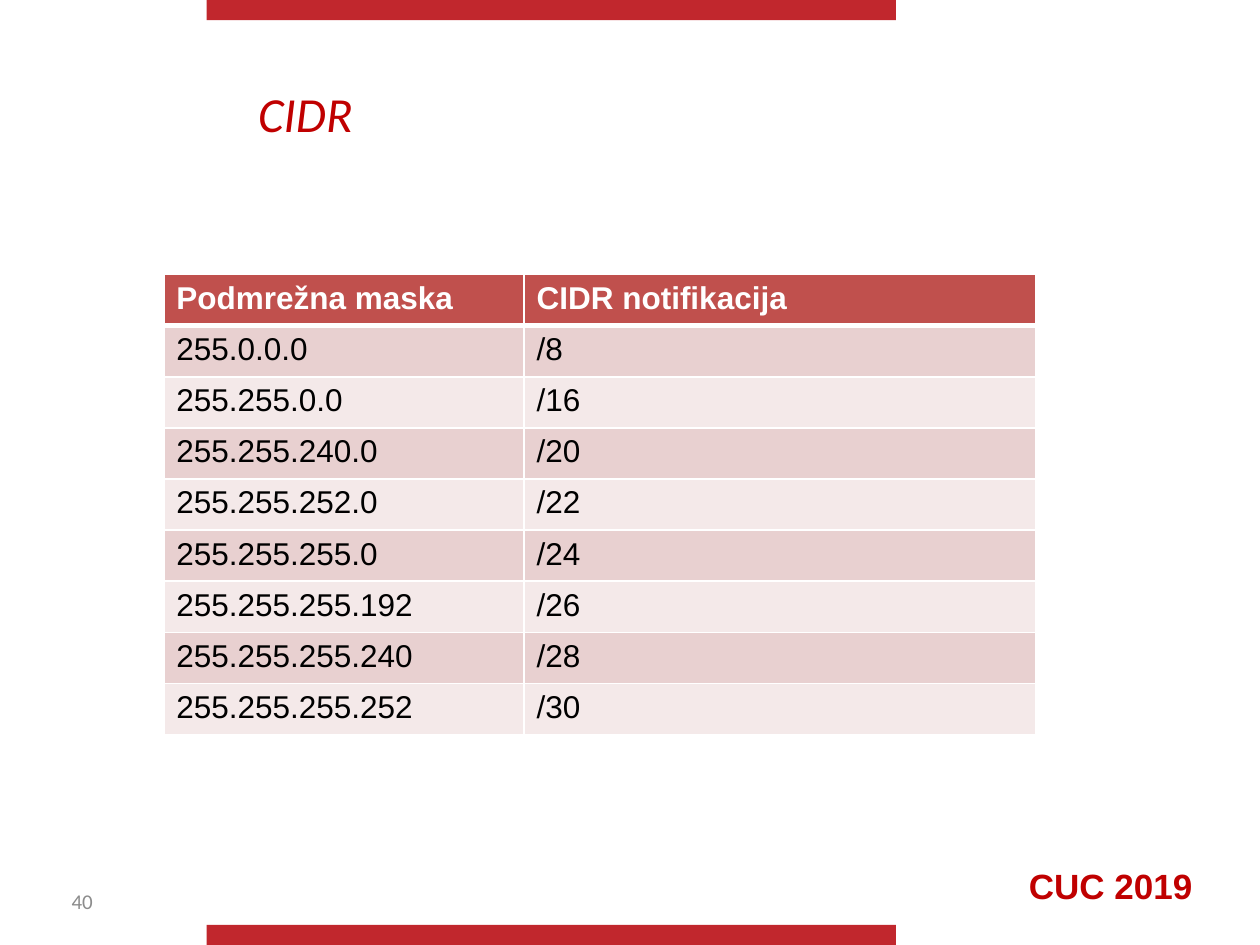
import pptx
import pptx.util
import pptx.dml.color
import pptx.enum.shapes
import pptx.enum.text
import pptx.oxml.ns
import lxml.etree

Inches, Pt = pptx.util.Inches, pptx.util.Pt
ALIGN, ANCHOR = pptx.enum.text.PP_ALIGN, pptx.enum.text.MSO_ANCHOR

# Content
TITLE, EVENT, PAGE_NUMBER = "CIDR", "CUC 2019", "40"
HEADER = ("Podmrežna maska", "CIDR notifikacija")
MASKS = [
    ("255.0.0.0", "/8"),
    ("255.255.0.0", "/16"),
    ("255.255.240.0", "/20"),
    ("255.255.252.0", "/22"),
    ("255.255.255.0", "/24"),
    ("255.255.255.192", "/26"),
    ("255.255.255.240", "/28"),
    ("255.255.255.252", "/30"),
]

THEME = {
    "bar": "C1272D", "accent": "C00000", "muted": "8C8C8C",
    "header": "C0504D", "bands": ("E8D0D0", "F4E9E9"),
    "light": "FFFFFF", "dark": "000000",
    "heading_font": "Calibri", "body_font": "Arial",
    "title": 28, "event": 20, "table": 18, "number": 12,
}
PAGE_WIDTH, PAGE_HEIGHT = 10, 7.5
BAR_LEFT, BAR_WIDTH, BAR_HEIGHT = 1.64, 5.47, 0.16
TABLE_LEFT, TABLE_TOP, TABLE_HEIGHT = 1.3, 2.18, 3.65
COLUMN_WIDTHS = (2.86, 4.06)
THIN, THICK = 1, 3


def rgb(name):
    return pptx.dml.color.RGBColor.from_string(name)


def style_text(frame, font, size, color, bold=False, italic=False):
    for para in frame.paragraphs:
        for span in para.runs:
            span.font.name, span.font.size = font, Pt(size)
            span.font.bold, span.font.italic = bold, italic
            span.font.color.rgb = rgb(color)


def add_text(page, text, place, anchor, align, *style, **emphasis):
    box = page.shapes.add_textbox(*map(Inches, place))
    frame = box.text_frame
    frame.word_wrap = True
    frame.vertical_anchor = anchor
    frame.text = text
    frame.paragraphs[0].alignment = align
    style_text(frame, *style, **emphasis)


def add_border(cell, side, width):
    properties = cell._tc.get_or_add_tcPr()
    qn = pptx.oxml.ns.qn
    line = lxml.etree.SubElement(properties, qn("a:ln" + side), w=str(Pt(width)))
    fill = lxml.etree.SubElement(line, qn("a:solidFill"))
    lxml.etree.SubElement(fill, qn("a:srgbClr"), val=THEME["light"])


def add_bars(page):
    for top in (PAGE_HEIGHT - BAR_HEIGHT, 0):
        bar = page.shapes.add_shape(
            pptx.enum.shapes.MSO_SHAPE.RECTANGLE,
            *map(Inches, (BAR_LEFT, top, BAR_WIDTH, BAR_HEIGHT)))
        bar.shadow.inherit = False
        bar.fill.solid()
        bar.fill.fore_color.rgb = rgb(THEME["bar"])
        bar.line.fill.background()


def add_mask_table(page):
    rows = [HEADER] + MASKS
    table = page.shapes.add_table(
        len(rows), len(HEADER), Inches(TABLE_LEFT), Inches(TABLE_TOP),
        Inches(sum(COLUMN_WIDTHS)), Inches(TABLE_HEIGHT)).table
    for column, width in zip(table.columns, COLUMN_WIDTHS):
        column.width = Inches(width)
    for row_index, row in enumerate(rows):
        is_header = row_index == 0
        table.rows[row_index].height = Inches(TABLE_HEIGHT / len(rows))
        fill = THEME["header"] if is_header else THEME["bands"][(row_index - 1) % 2]
        # The rule under the header is thicker than the others
        top = THICK if row_index == 1 else THIN
        bottom = THICK if is_header else THIN
        for column_index, text in enumerate(row):
            cell = table.cell(row_index, column_index)
            for side, width in (("L", THIN), ("R", THIN), ("T", top), ("B", bottom)):
                add_border(cell, side, width)
            cell.fill.solid()
            cell.fill.fore_color.rgb = rgb(fill)
            cell.text_frame.text = text
            style_text(cell.text_frame, THEME["body_font"], THEME["table"],
                       THEME["light" if is_header else "dark"], bold=is_header)


def main():
    deck = pptx.Presentation()
    deck.slide_width, deck.slide_height = Inches(PAGE_WIDTH), Inches(PAGE_HEIGHT)
    page = deck.slides.add_slide(deck.slide_layouts[6])

    # Frame of the page
    add_bars(page)
    add_text(page, EVENT, (7.91, 6.81, 1.81, 0.44), ANCHOR.TOP, ALIGN.CENTER,
             THEME["body_font"], THEME["event"], THEME["accent"], bold=True)

    # Title, page number and table
    add_text(page, TITLE, (1.95, 0.55, 7.58, 0.7), ANCHOR.MIDDLE, ALIGN.LEFT,
             THEME["heading_font"], THEME["title"], THEME["accent"], italic=True)
    add_text(page, PAGE_NUMBER, (0.47, 6.95, 2.33, 0.4), ANCHOR.MIDDLE, ALIGN.LEFT,
             THEME["heading_font"], THEME["number"], THEME["muted"])
    add_mask_table(page)
    deck.save("out.pptx")


if __name__ == "__main__":
    main()
